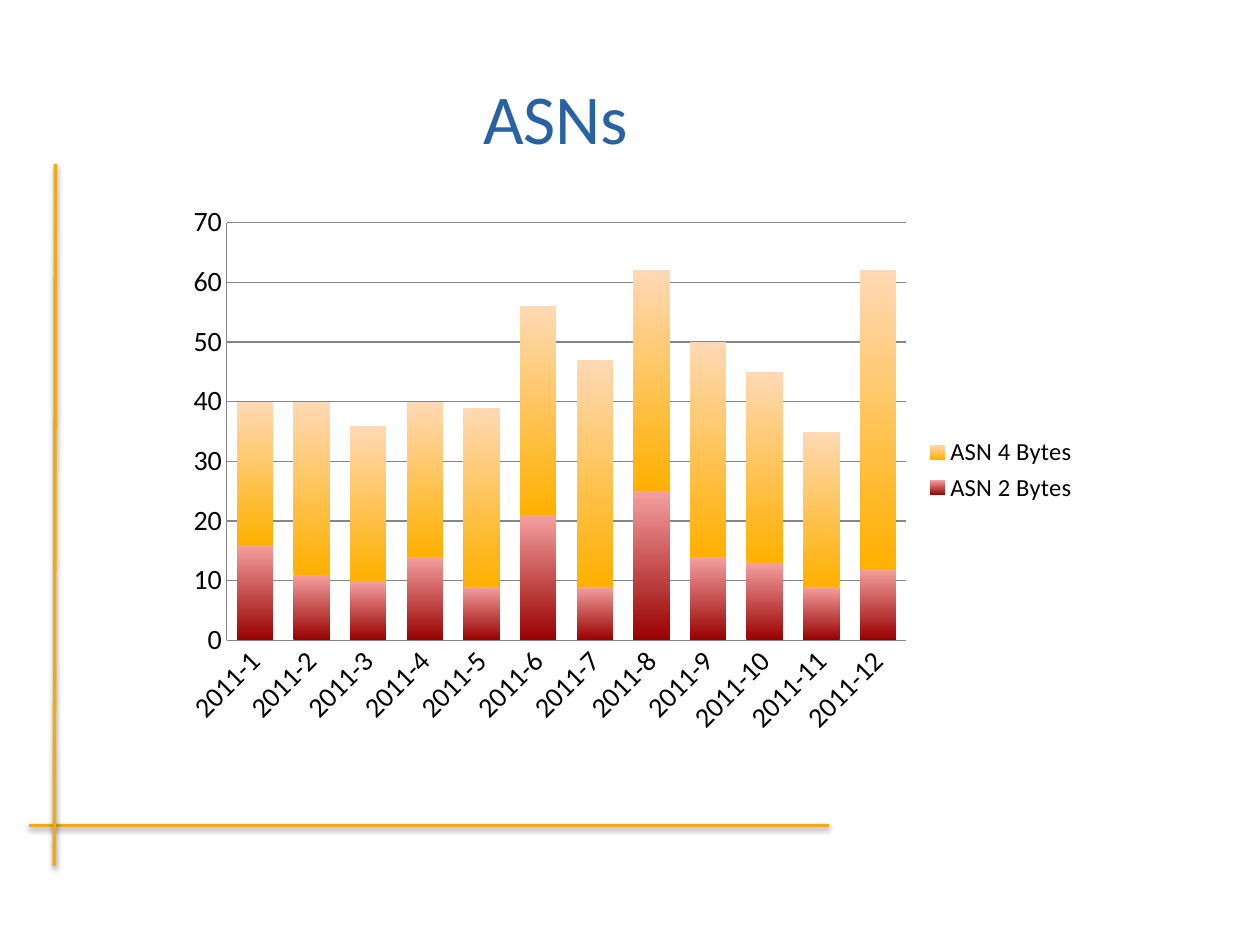
from lxml import etree
from pptx import Presentation
from pptx.chart.data import CategoryChartData
from pptx.dml.color import RGBColor
from pptx.enum.chart import XL_CHART_TYPE as CT, XL_LEGEND_POSITION as LP, XL_TICK_MARK as TM
from pptx.enum.shapes import MSO_CONNECTOR as MC
from pptx.enum.text import MSO_ANCHOR, PP_ALIGN
from pptx.oxml import parse_xml
from pptx.oxml.ns import nsdecls, qn
from pptx.util import Pt

THEME = {
    "font": "Calibri",
    "title": RGBColor.from_string("2962A2"),
    "rule": RGBColor.from_string("EFAB16"),
    "text": RGBColor.from_string("000000"),
    "grid": RGBColor.from_string("868686"),
    "title_size": Pt(40),
    "axis_size": Pt(16),
    "legend_size": Pt(14),
    "chart_size": Pt(10),
}
# name, values, gradient from bottom to top
SERIES = [
    ("ASN 2 Bytes", [16, 11, 10, 14, 9, 21, 9, 25, 14, 13, 9, 12], ("990000", "F4A0A0")),
    ("ASN 4 Bytes", [24, 29, 26, 26, 30, 35, 38, 37, 36, 32, 26, 50], ("FFB000", "FFD9B5")),
]
RULES = [(16.5, 471.6, 474, 471.6), (31, 494.6, 31.7, 93.6)]
PLOT = {"x": 0.06, "y": 0.05, "w": 0.74, "h": 0.76}


def set_font(font, size, color):
    for key, value in {"name": THEME["font"], "size": size}.items():
        setattr(font, key, value)
    font.color.rgb = color


prs = Presentation()
prs.slide_width, prs.slide_height = Pt(720), Pt(540)
s = prs.slides.add_slide(prs.slide_layouts[5])

# Crossing rules
for ends in RULES:
    rule = s.shapes.add_connector(MC.STRAIGHT, *[Pt(v) for v in ends])
    rule.line.color.rgb = THEME["rule"]
    rule.line.width = Pt(2)
    rule._element.spPr.append(parse_xml(
        f'<a:effectLst {nsdecls("a")}><a:outerShdw blurRad="{Pt(3.1)}" dist="{Pt(1.6)}" '
        'dir="5400000" rotWithShape="0"><a:srgbClr val="000000"><a:alpha val="38000"/>'
        '</a:srgbClr></a:outerShdw></a:effectLst>'))

# Title
title = s.shapes.title
for key, value in {"left": 47.5, "top": 21.6, "width": 540, "height": 90}.items():
    setattr(title, key, Pt(value))
tf = title.text_frame
tf.text = "ASNs"
tf.vertical_anchor = MSO_ANCHOR.MIDDLE
p = tf.paragraphs[0]
p.alignment = PP_ALIGN.CENTER
set_font(p.runs[0].font, THEME["title_size"], THEME["title"])

# Stacked column chart
data = CategoryChartData()
data.categories = [f"2011-{month}" for month in range(1, 13)]
for name, values, _ in SERIES:
    data.add_series(name, values)
chart = s.shapes.add_chart(CT.COLUMN_STACKED, Pt(98), Pt(111.6), Pt(525), Pt(314), data).chart
set_font(chart.font, THEME["chart_size"], THEME["text"])
chart.has_title = False
chart.has_legend = True
chart.legend.position = LP.RIGHT
chart.legend.include_in_layout = False
set_font(chart.legend.font, THEME["legend_size"], THEME["text"])

plot = chart.plots[0]
for key, value in {"gap_width": 55, "overlap": 100, "vary_by_categories": False}.items():
    setattr(plot, key, value)
for series, (_, _, colors) in zip(plot.series, SERIES):
    fill = series.format.fill
    fill.gradient()
    fill.gradient_angle = 90
    for stop, color in zip(fill.gradient_stops, colors):
        stop.color.rgb = RGBColor.from_string(color)

for axis in (chart.category_axis, chart.value_axis):
    axis.major_tick_mark = axis.minor_tick_mark = TM.NONE
    set_font(axis.tick_labels.font, THEME["axis_size"], THEME["text"])
    axis.format.line.color.rgb = THEME["grid"]
chart.category_axis._element.find(qn("c:txPr")).find(qn("a:bodyPr")).set("rot", "-2700000")
axis = chart.value_axis
for key, value in {"minimum_scale": 0, "maximum_scale": 70, "major_unit": 10}.items():
    setattr(axis, key, value)
axis.major_gridlines.format.line.color.rgb = THEME["grid"]

# Fixed plot area inside the chart
area = chart._chartSpace.chart.plotArea
for old in area.findall(qn("c:layout")):
    area.remove(old)
layout = etree.Element(qn("c:layout"))
manual = etree.SubElement(layout, qn("c:manualLayout"))
settings = {"layoutTarget": "inner", "xMode": "edge", "yMode": "edge", **PLOT}
for tag, value in settings.items():
    etree.SubElement(manual, qn(f"c:{tag}")).set("val", str(value))
area.insert(0, layout)

prs.save("out.pptx")
